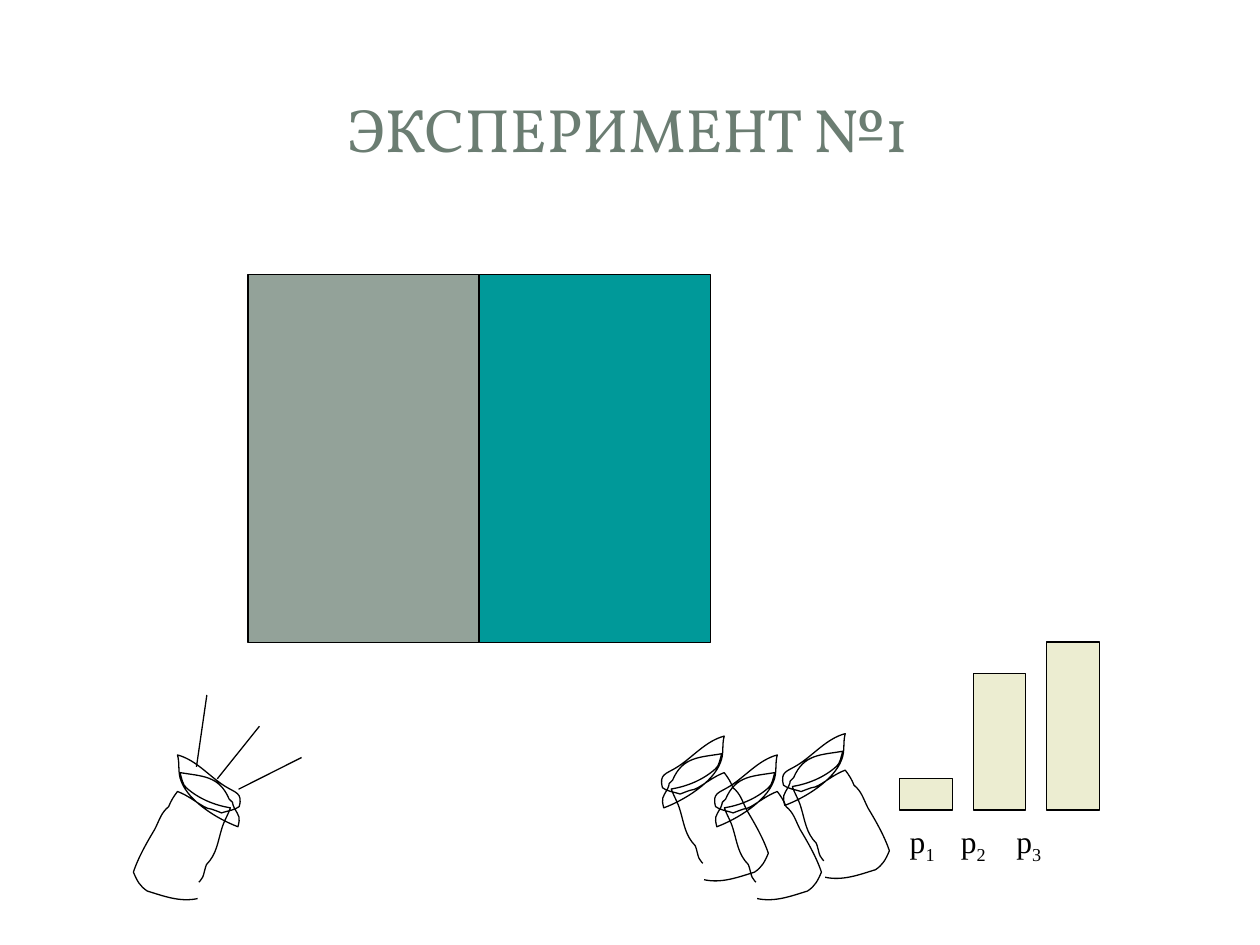
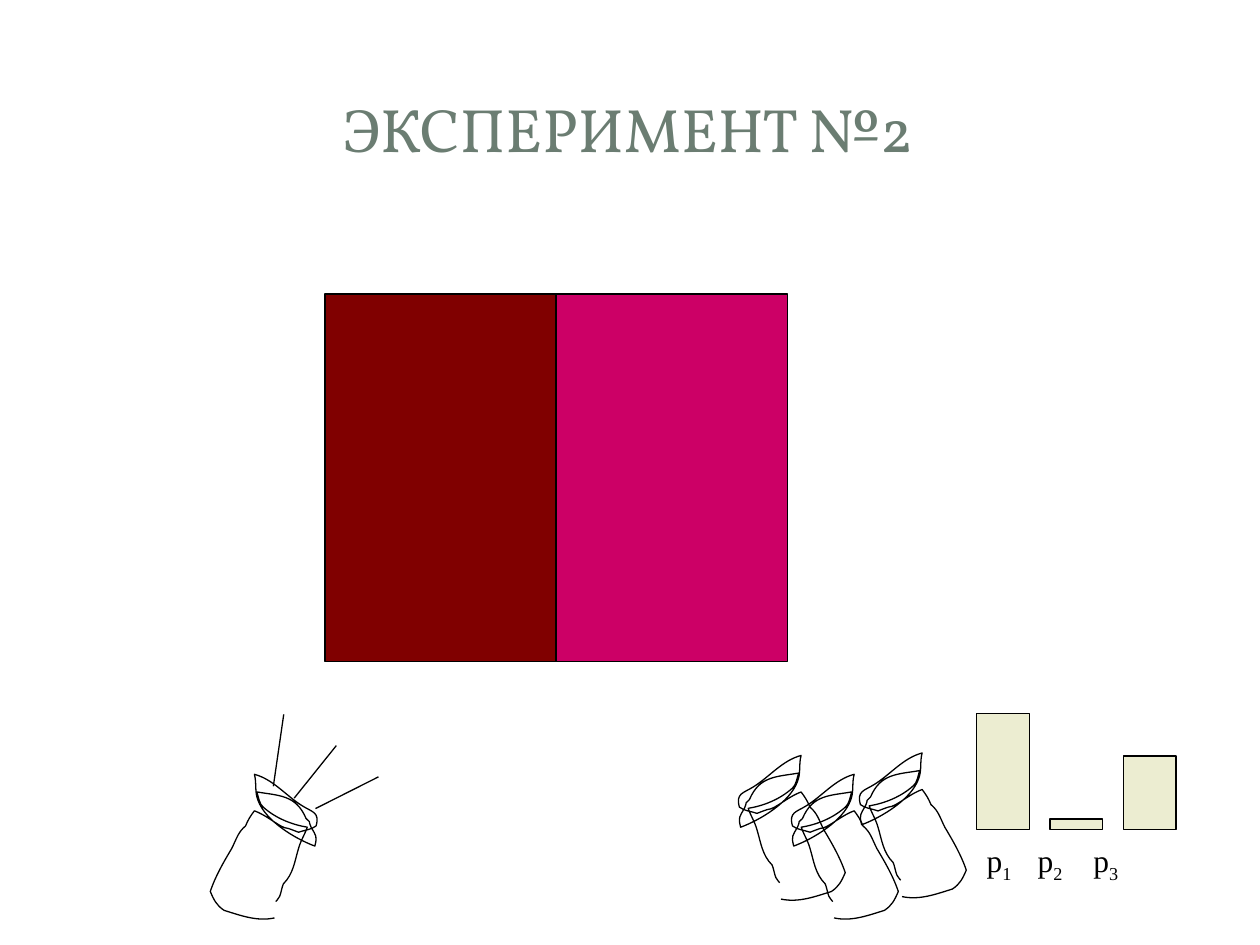
from dataclasses import dataclass

from lxml import etree
from pptx import Presentation
from pptx.dml.color import RGBColor
from pptx.enum import shapes, text
from pptx.oxml import ns
from pptx.util import Cm, Pt


@dataclass(frozen=True)
class Theme:
    title_font: str = "Vollkorn"
    label_font: str = "Times New Roman"
    title_size: float = 35
    label_size: float = 18
    title_color: str = "6B7D72"
    ink: str = "000000"
    bar_fill: str = "ECEDD1"
    outline: float = 0.75


THEME = Theme()

# Hand outline: start point, then three points per Bezier curve
HAND_WIDTH, HAND_UNITS = 2.21, 87
HAND_START = (36, 114)
HAND_CURVES = [
    [(50, 117), (63, 112), (76, 108)], [(82, 104), (84, 100), (87, 93)],
    [(83, 81), (76, 69), (70, 59)], [(66, 51), (65, 46), (59, 41)],
    [(57, 36), (55, 33), (52, 29)], [(44, 32), (38, 37), (31, 41)],
    [(29, 42), (27, 43), (25, 43)], [(22, 44), (17, 46), (17, 46)],
    [(11, 44), (7, 44), (3, 41)], [(0, 30), (6, 30), (14, 25)],
    [(27, 17), (37, 4), (52, 0)], [(50, 7), (52, 14), (49, 21)],
    [(43, 37), (20, 51), (4, 57)], [(2, 49), (3, 49), (7, 42)],
    [(10, 35), (6, 40), (11, 35)], [(19, 16), (33, 17), (50, 14)],
    [(49, 17), (48, 24), (45, 26)], [(35, 35), (22, 40), (10, 42)],
    [(12, 48), (15, 52), (17, 59)], [(20, 69), (21, 79), (29, 87)],
    [(30, 89), (31, 95), (32, 97)], [(33, 99), (35, 101), (35, 101)],
]


def write(paragraph, content, *, font, size, color, baseline=0):
    run = paragraph.add_run()
    run.text = content
    run.font.name = font
    run.font.size = Pt(size)
    run.font.color.rgb = RGBColor.from_string(color)
    if baseline:
        run._r.get_or_add_rPr().set("baseline", str(baseline * 1000))


def text_frame(slide, left, top, width, height):
    frame = slide.shapes.add_textbox(Cm(left), Cm(top), Cm(width), Cm(height)).text_frame
    frame.word_wrap = True
    return frame


def draw_outline(line):
    line.color.rgb = RGBColor.from_string(THEME.ink)
    line.width = Pt(THEME.outline)


def block(slide, left, top, width, height, fill):
    rect = slide.shapes.add_shape(shapes.MSO_SHAPE.RECTANGLE,
                                  Cm(left), Cm(top), Cm(width), Cm(height))
    rect.shadow.inherit = False
    rect.fill.solid()
    rect.fill.fore_color.rgb = RGBColor.from_string(fill)
    draw_outline(rect.line)


def title(slide, content):
    frame = text_frame(slide, 1.19, 1.14, 22.94, 2.9)
    frame.vertical_anchor = text.MSO_ANCHOR.MIDDLE
    frame.paragraphs[0].alignment = text.PP_ALIGN.CENTER
    write(frame.paragraphs[0], content, font=THEME.title_font,
          size=THEME.title_size, color=THEME.title_color)


def color_fields(slide, left, top, fills):
    width, height = 4.66, 7.41
    for i, fill in enumerate(fills):
        block(slide, left + i * width, top, width, height, fill)


def hand(slide, left, top, mirrored=False):
    def place(point):
        x, y = point
        return (HAND_UNITS - x if mirrored else x), y

    points = [place(p) for curve in HAND_CURVES for p in curve]
    builder = slide.shapes.build_freeform(*place(HAND_START),
                                          scale=Cm(HAND_WIDTH) / HAND_UNITS)
    builder.add_line_segments(points, close=False)
    outline = builder.convert_to_shape(Cm(left), Cm(top))
    outline.shadow.inherit = False
    outline.fill.background()
    draw_outline(outline.line)

    # Turn each run of three line points into one Bezier curve
    route = outline._element.find(".//" + ns.qn("a:path"))
    steps = route.findall(ns.qn("a:lnTo"))
    for i in range(0, len(steps), 3):
        curve = etree.SubElement(route, ns.qn("a:cubicBezTo"))
        for step in steps[i:i + 3]:
            curve.append(step[0])
            route.remove(step)


def rays(slide, left, top):
    for x1, y1, x2, y2 in [(0.21, 1.45, 0, 0), (0.85, 1.9, 2.12, 1.26),
                           (0.42, 1.69, 1.27, 0.63)]:
        # The first ray rises to the right from the box's left edge
        if (x2, y2) == (0, 0):
            x1, x2 = x2, x1
        ray = slide.shapes.add_connector(
            shapes.MSO_CONNECTOR.STRAIGHT, Cm(left + x1), Cm(top + y1),
            Cm(left + x2), Cm(top + y2))
        draw_outline(ray.line)
        etree.SubElement(ray._element.spPr, ns.qn("a:effectLst"))


def probability_bars(slide, left, base, heights):
    width, step = 1.06, 1.48
    for i, height in enumerate(heights):
        block(slide, left + i * step, base - height, width, height, THEME.bar_fill)

    # Labels on tab stops under the bars
    labels = text_frame(slide, left - 0.05, base + 0.11, 4.52, 1.27).paragraphs[0]
    tabs = etree.SubElement(labels._p.get_or_add_pPr(), ns.qn("a:tabLst"))
    for stop in (1.03, 2.15):
        etree.SubElement(tabs, ns.qn("a:tab"), pos=str(Cm(stop)), algn="l")
    style = dict(font=THEME.label_font, size=THEME.label_size, color=THEME.ink)
    for i in range(len(heights)):
        write(labels, "\tp" if i else "p", **style)
        write(labels, str(i + 1), baseline=-25, **style)


def experiment(prs, heading, left, top, fills, heights):
    slide = prs.slides.add_slide(prs.slide_layouts[6])
    title(slide, heading)
    color_fields(slide, left + 2.31, top, fills)
    for x, y in [(13.03, 9.25), (11.66, 9.68), (10.59, 9.3)]:
        hand(slide, left + x, top + y)
    hand(slide, left, top + 9.68, mirrored=True)
    rays(slide, left + 1.27, top + 8.47)
    probability_bars(slide, left + 15.45, top + 10.79, heights)


def main():
    prs = Presentation()
    prs.slide_width, prs.slide_height = Cm(25.4), Cm(19.05)
    experiment(prs, "ЭКСПЕРИМЕНТ №1", 2.69, 5.54, ("93A299", "009999"), (0.64, 2.75, 3.39))
    experiment(prs, "ЭКСПЕРИМЕНТ №2", 4.24, 5.93, ("800000", "CC0066"), (2.33, 0.21, 1.48))
    prs.save("out.pptx")


if __name__ == "__main__":
    main()
